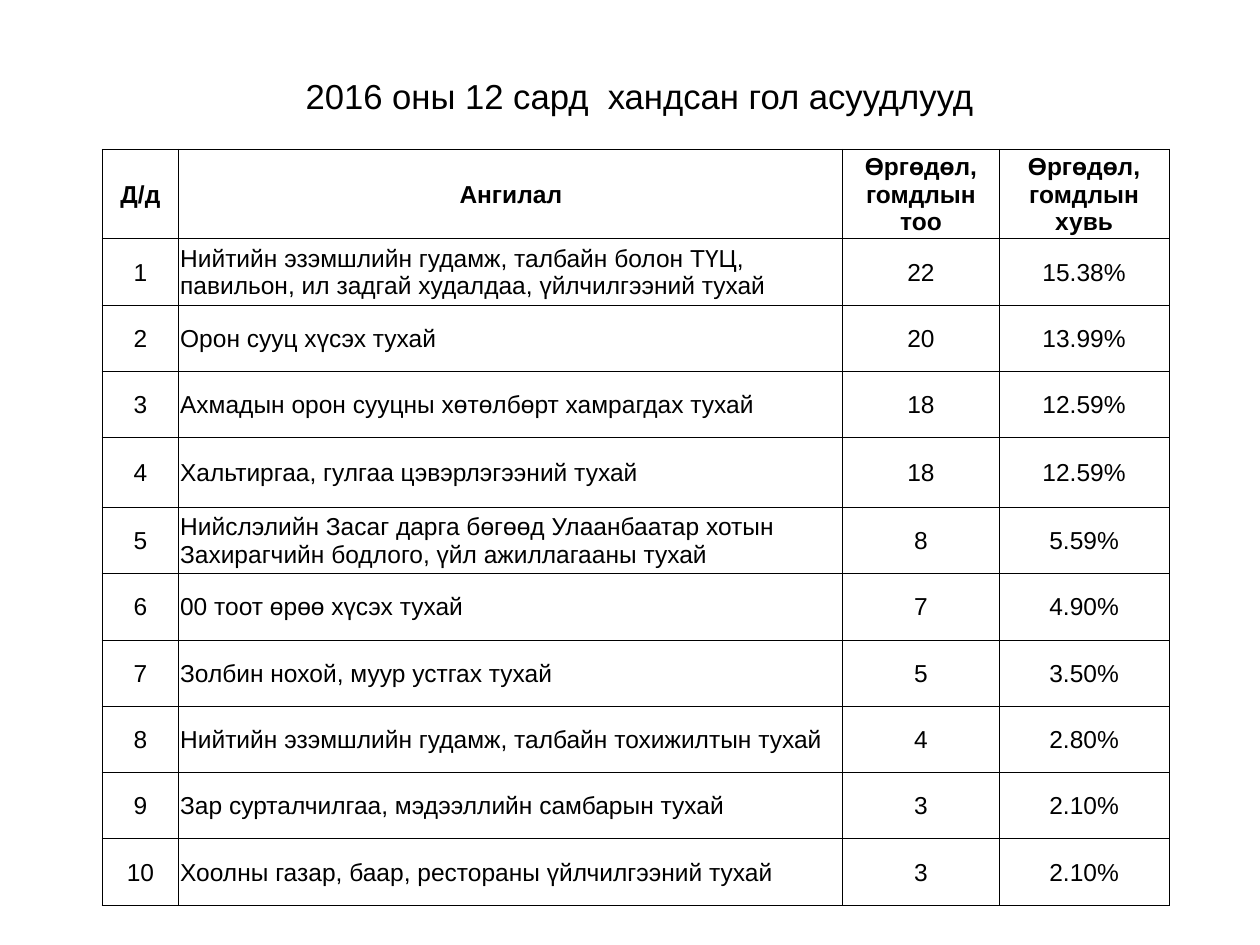
from lxml import etree
from pptx import Presentation
from pptx import util as u
from pptx.dml.color import RGBColor
from pptx.enum import text

BLACK = RGBColor(0, 0, 0)
WHITE = RGBColor(255, 255, 255)
LEFT, MID = text.PP_ALIGN.LEFT, text.PP_ALIGN.CENTER
SPACE = "http://schemas.openxmlformats.org/drawingml/2006/main"

TITLE = "2016 оны 12 сард  хандсан гол асуудлууд"
HEAD = ("Д/д", "Ангилал", "Өргөдөл, гомдлын тоо", "Өргөдөл, гомдлын хувь")
TOPICS = (
    ("Нийтийн эзэмшлийн гудамж, талбайн болон ТҮЦ, павильон, ил задгай "
     "худалдаа, үйлчилгээний тухай", "22", "15.38%"),
    ("Орон сууц хүсэх тухай", "20", "13.99%"),
    ("Ахмадын орон сууцны хөтөлбөрт хамрагдах тухай", "18", "12.59%"),
    ("Хальтиргаа, гулгаа цэвэрлэгээний тухай", "18", "12.59%"),
    ("Нийслэлийн Засаг дарга бөгөөд Улаанбаатар хотын Захирагчийн бодлого, "
     "үйл ажиллагааны тухай", "8", "5.59%"),
    ("00 тоот өрөө хүсэх тухай", "7", "4.90%"),
    ("Золбин нохой, муур устгах тухай", "5", "3.50%"),
    ("Нийтийн эзэмшлийн гудамж, талбайн тохижилтын тухай", "4", "2.80%"),
    ("Зар сурталчилгаа, мэдээллийн самбарын тухай", "3", "2.10%"),
    ("Хоолны газар, баар, рестораны үйлчилгээний тухай", "3", "2.10%"),
)


class Deck:
    """Hold the style and the current slide, with lengths as percent of its size."""

    font = "Arial"
    rule = u.Pt(0.5)
    inset = u.Inches(0.01)

    def __init__(self, wide, high):
        self.prs = Presentation()
        self.prs.slide_width = u.Inches(wide)
        self.prs.slide_height = u.Inches(high)
        self.slide = self.prs.slides.add_slide(self.prs.slide_layouts[6])

    def across(self, share):
        return round(self.prs.slide_width * share / 100)

    def down(self, share):
        return round(self.prs.slide_height * share / 100)

    def label(self, frame, words, align=MID, **style):
        frame.word_wrap = True
        para = frame.paragraphs[0]
        para.alignment = align
        run = para.add_run()
        run.text = words
        run.font.color.rgb = BLACK
        for name, value in {"name": self.font, "bold": False, **style}.items():
            setattr(run.font, name, value)

    def title(self, words, left, top, wide, high, size):
        box = self.slide.shapes.add_textbox(
            self.across(left), self.down(top), self.across(wide), self.down(high))
        box.text_frame.vertical_anchor = text.MSO_ANCHOR.MIDDLE
        self.label(box.text_frame, words, size=u.Pt(size))

    def border(self, cell):
        props = cell._tc.get_or_add_tcPr()
        for spot, side in enumerate(("lnL", "lnR", "lnT", "lnB")):
            line = etree.Element(f"{{{SPACE}}}{side}", w=str(int(self.rule)))
            fill = etree.SubElement(line, f"{{{SPACE}}}solidFill")
            etree.SubElement(fill, f"{{{SPACE}}}srgbClr", val=str(BLACK))
            props.insert(spot, line)

    def cell(self, cell, words, align, bold, size):
        form = {"margin_left": self.inset, "margin_right": self.inset,
                "margin_top": self.inset, "margin_bottom": 0,
                "vertical_anchor": text.MSO_ANCHOR.MIDDLE}
        for name, value in form.items():
            setattr(cell, name, value)
        cell.fill.solid()
        cell.fill.fore_color.rgb = WHITE
        self.border(cell)
        self.label(cell.text_frame, words, align, bold=bold, size=u.Pt(size))

    def table(self, rows, left, top, cols, highs, size):
        grid = self.slide.shapes.add_table(
            len(rows), len(cols), self.across(left), self.down(top),
            self.across(sum(cols)), self.down(sum(highs))).table
        for col, wide in zip(grid.columns, cols):
            col.width = self.across(wide)
        for r, (row, high) in enumerate(zip(rows, highs)):
            grid.rows[r].height = self.down(high)
            for c, words in enumerate(row):
                align = LEFT if r and c == 1 else MID
                self.cell(grid.cell(r, c), words, align, r == 0, size)


def main():
    deck = Deck(10, 7.5)
    deck.title(TITLE, 9.8, 5.8, 81.9, 8.7, 19.8)
    rows = [HEAD] + [(str(n), *topic) for n, topic in enumerate(TOPICS, 1)]
    highs = [8.8] + [7.02] * len(TOPICS)
    highs[4] = 7.35
    deck.table(rows, 8.1, 15.8, (6.1, 52.7, 12.4, 13.5), highs, 14)
    deck.prs.save("out.pptx")


if __name__ == "__main__":
    main()
